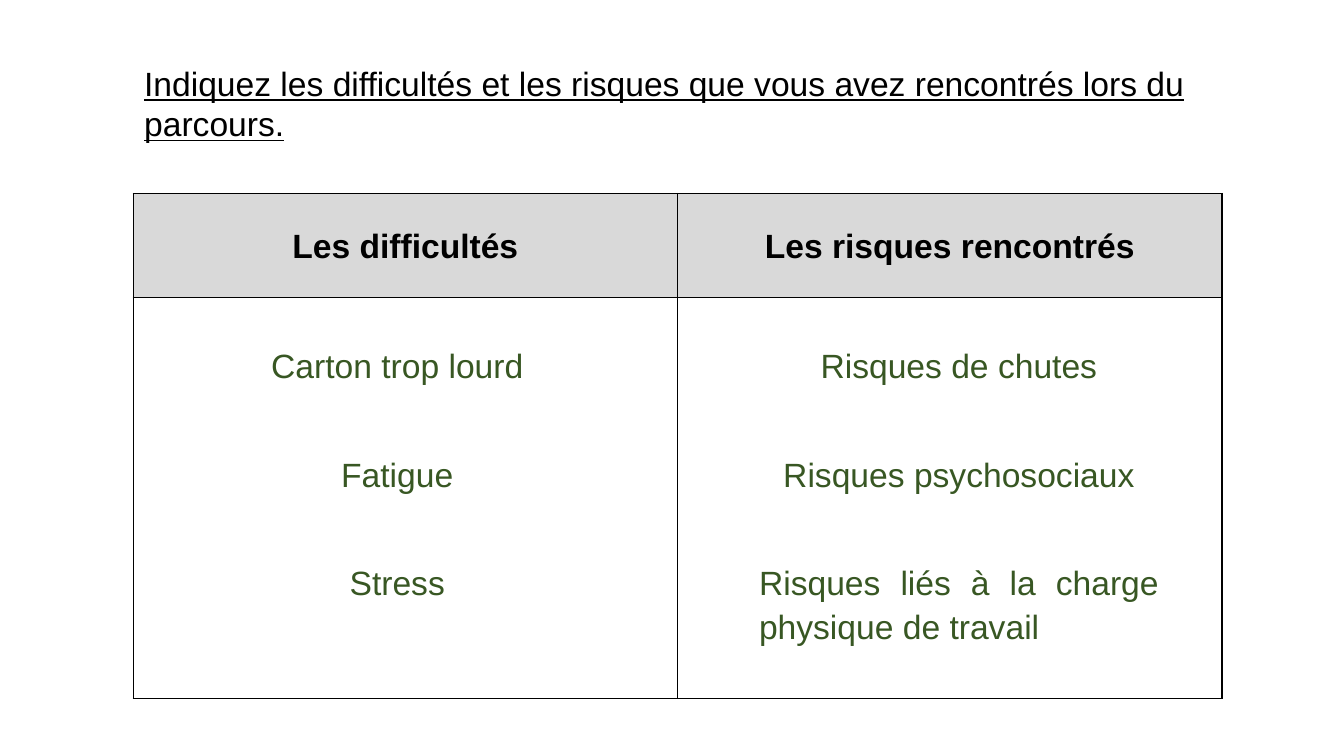
import dataclasses

import lxml.etree
import pptx
import pptx.dml.color
import pptx.enum.text
import pptx.oxml.ns
import pptx.presentation
import pptx.slide
import pptx.table
import pptx.text.text
import pptx.util

BLACK = pptx.dml.color.RGBColor(0x00, 0x00, 0x00)
GREY = pptx.dml.color.RGBColor(0xD9, 0xD9, 0xD9)
GREEN = pptx.dml.color.RGBColor(0x38, 0x57, 0x23)

ALIGN = pptx.enum.text.PP_ALIGN
MIDDLE = pptx.enum.text.MSO_ANCHOR.MIDDLE
FIT = pptx.enum.text.MSO_AUTO_SIZE.SHAPE_TO_FIT_TEXT

WIDTH = pptx.util.Inches(13.33)
HEIGHT = pptx.util.Inches(7.5)
COLS = 133.3
ROWS = 75


@dataclasses.dataclass(frozen=True)
class Area:
    left: float
    top: float
    width: float
    height: float

    def box(self) -> tuple[int, int, int, int]:
        return (
            round(self.left * WIDTH / COLS),
            round(self.top * HEIGHT / ROWS),
            round(self.width * WIDTH / COLS),
            round(self.height * HEIGHT / ROWS),
        )


@dataclasses.dataclass(frozen=True)
class Answer:
    text: str
    align: ALIGN = ALIGN.CENTER


@dataclasses.dataclass(frozen=True)
class Column:
    head: str
    area: Area
    answers: tuple[Answer, ...]


TITLE = "Indiquez les difficultés et les risques que vous avez rencontrés lors du parcours."
TITLE_AREA = Area(13.3, 5.7, 106.8, 9.1)
GRID_AREA = Area(13.2, 19.2, 108, 50.1)
HEAD_ROWS = 10.3
COLUMNS = (
    Column(
        "Les difficultés",
        Area(17.2, 33.4, 44.4, 26.8),
        (Answer("Carton trop lourd"), Answer("Fatigue"), Answer("Stress")),
    ),
    Column(
        "Les risques rencontrés",
        Area(74.3, 33.4, 41.6, 31.1),
        (
            Answer("Risques de chutes"),
            Answer("Risques psychosociaux"),
            Answer("Risques liés à la charge physique de travail", ALIGN.JUSTIFY),
        ),
    ),
)


def style(par: pptx.text.text._Paragraph, color: pptx.dml.color.RGBColor, align: ALIGN) -> None:
    par.alignment = align
    par.font.name = "Arial"
    par.font.size = pptx.util.Pt(24)
    par.font.color.rgb = color


def border(cell: pptx.table._Cell) -> None:
    props = cell._tc.get_or_add_tcPr()
    for rank, side in enumerate(("lnL", "lnR", "lnT", "lnB")):
        line = lxml.etree.Element(pptx.oxml.ns.qn(f"a:{side}"), w=str(pptx.util.Pt(1)))
        fill = lxml.etree.SubElement(line, pptx.oxml.ns.qn("a:solidFill"))
        lxml.etree.SubElement(fill, pptx.oxml.ns.qn("a:srgbClr"), val=str(BLACK))
        props.insert(rank, line)


def add_title(slide: pptx.slide.Slide) -> None:
    title = slide.shapes.title
    title.left, title.top, title.width, title.height = TITLE_AREA.box()
    frame = title.text_frame
    frame.text = TITLE
    frame.word_wrap = True
    frame.auto_size = FIT
    frame.vertical_anchor = MIDDLE
    par = frame.paragraphs[0]
    style(par, BLACK, ALIGN.LEFT)
    par.font.underline = True


def add_grid(slide: pptx.slide.Slide) -> None:
    table = slide.shapes.add_table(2, len(COLUMNS), *GRID_AREA.box()).table
    table.horz_banding = False
    table.rows[0].height = round(HEAD_ROWS * HEIGHT / ROWS)
    table.rows[1].height = round((GRID_AREA.height - HEAD_ROWS) * HEIGHT / ROWS)
    for cell in table.iter_cells():
        cell.fill.background()
        border(cell)
    for rank, column in enumerate(COLUMNS):
        cell = table.cell(0, rank)
        cell.fill.solid()
        cell.fill.fore_color.rgb = GREY
        cell.vertical_anchor = MIDDLE
        cell.margin_left = cell.margin_right = pptx.util.Inches(0.07)
        cell.margin_top = cell.margin_bottom = 0
        cell.text = column.head
        par = cell.text_frame.paragraphs[0]
        style(par, BLACK, ALIGN.CENTER)
        par.font.bold = True
        par.line_spacing = 1.07
        par.space_after = pptx.util.Pt(8)


def add_answers(slide: pptx.slide.Slide, column: Column) -> None:
    frame = slide.shapes.add_textbox(*column.area.box()).text_frame
    frame.word_wrap = True
    frame.text = "\n".join(answer.text for answer in column.answers)
    for par, answer in zip(frame.paragraphs, column.answers):
        style(par, GREEN, answer.align)
        par.line_spacing = 1.07
        par.space_after = pptx.util.Pt(47)


def main() -> None:
    deck = pptx.Presentation()
    deck.slide_width = WIDTH
    deck.slide_height = HEIGHT
    slide = deck.slides.add_slide(deck.slide_layouts.get_by_name("Title Only"))
    add_title(slide)
    add_grid(slide)
    for column in COLUMNS:
        add_answers(slide, column)
    deck.save("out.pptx")


if __name__ == "__main__":
    main()
